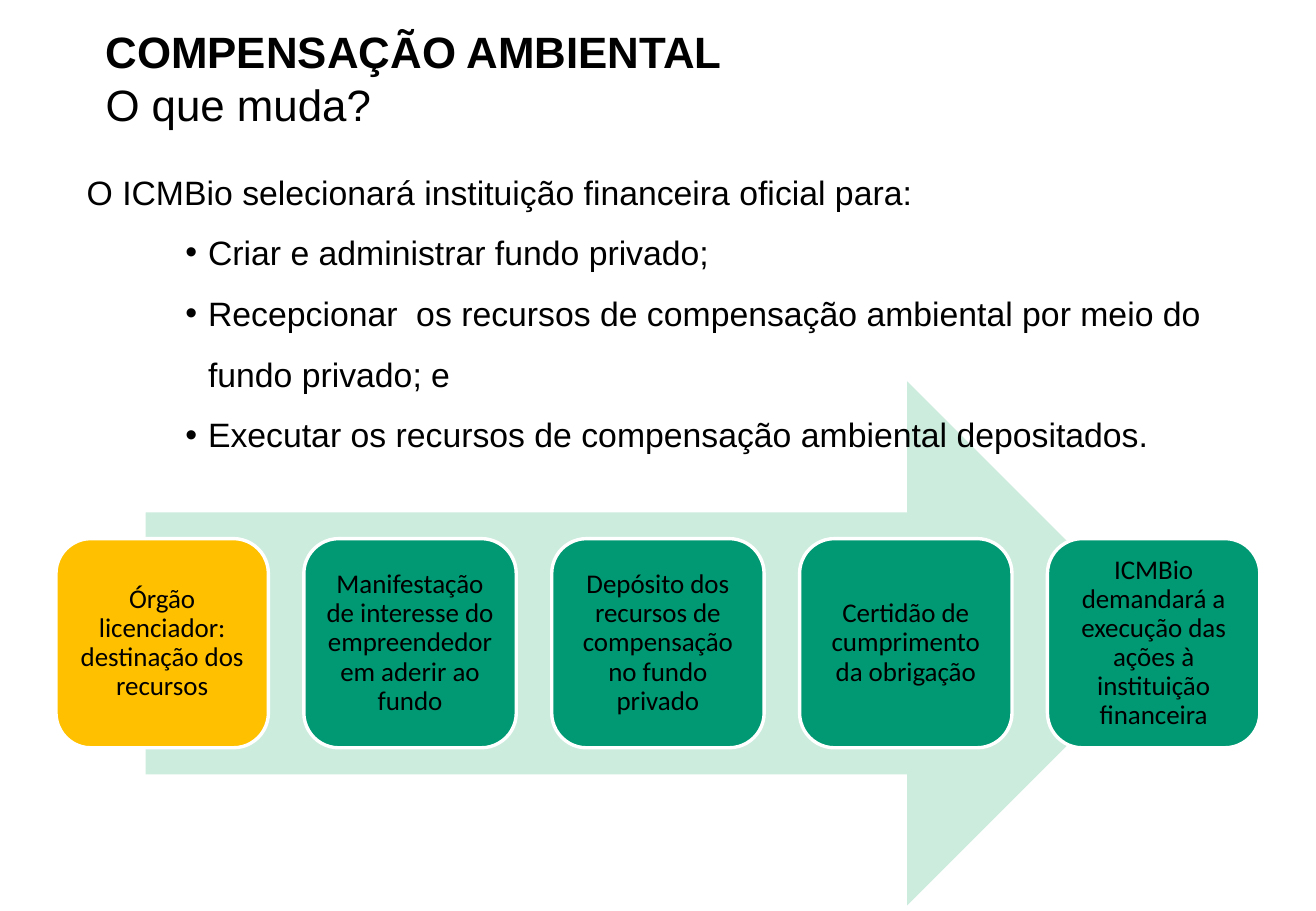
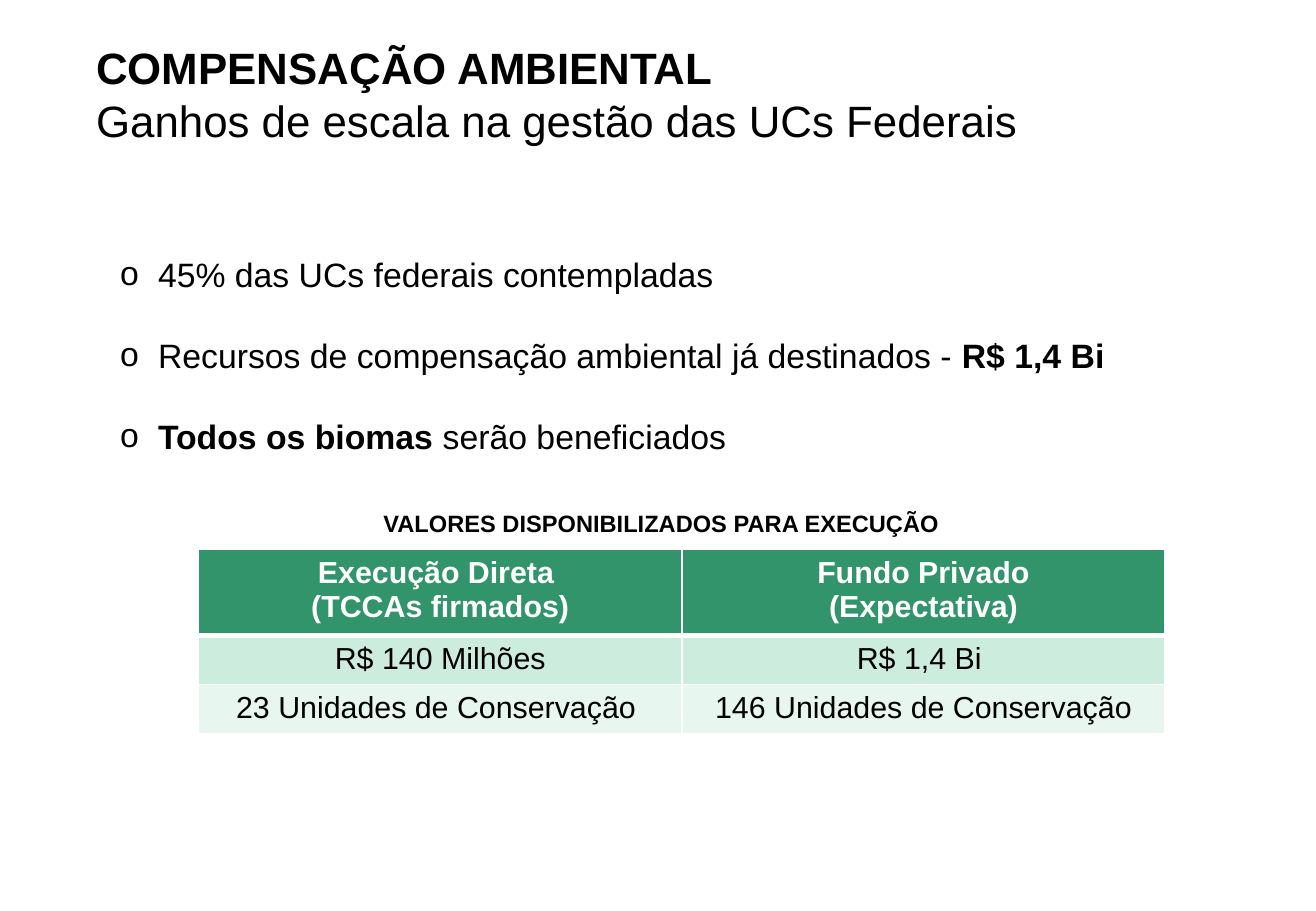
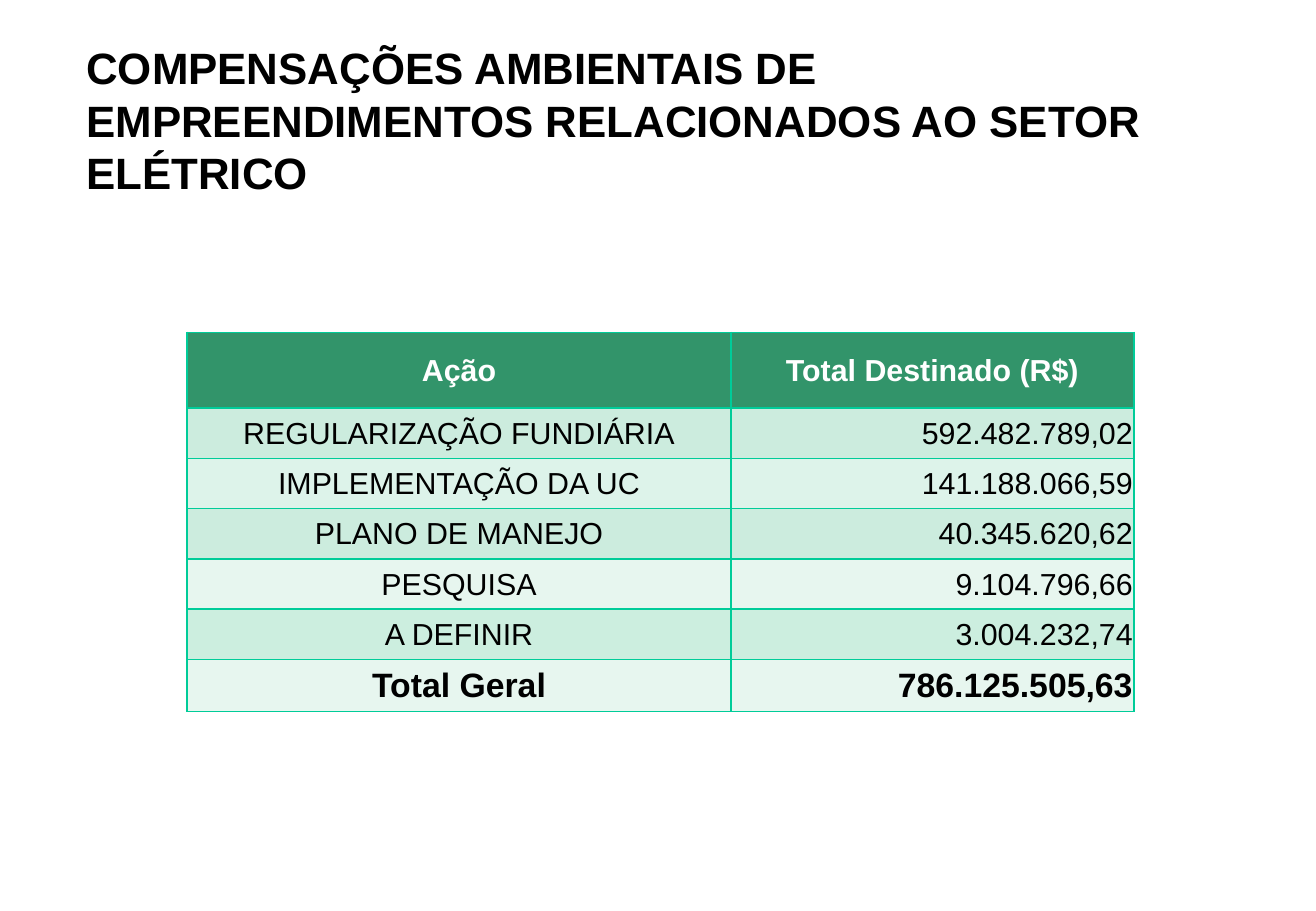
"""Builds three slides on environmental compensation funds."""
from lxml.etree import SubElement
from pptx import Presentation
from pptx.dml.color import RGBColor
from pptx.enum.shapes import MSO_SHAPE
from pptx.enum.text import MSO_ANCHOR, MSO_AUTO_SIZE, PP_ALIGN
from pptx.oxml import parse_xml
from pptx.oxml.ns import nsdecls, qn
from pptx.util import Pt

BLACK = RGBColor(0x00, 0x00, 0x00)
WHITE = RGBColor(0xFF, 0xFF, 0xFF)
AMBER = RGBColor(0xFF, 0xC0, 0x00)
GREEN = RGBColor(0x00, 0x99, 0x73)
TEAL = RGBColor(0x00, 0xCC, 0x99)
HEADER = RGBColor(0x32, 0x94, 0x6A)
MINT = RGBColor(0xCC, 0xEC, 0xDE)
SOFT_MINT = RGBColor(0xCC, 0xEE, 0xDF)
PALE_MINT = RGBColor(0xDD, 0xF3, 0xEA)
FAINT_MINT = RGBColor(0xE7, 0xF6, 0xEF)

SLIDE_WIDTH, SLIDE_HEIGHT = Pt(780.48), Pt(540)
CONTENT_LAYOUT, TITLE_LAYOUT = 1, 5
TITLE_SIZE, BODY_SIZE, CELL_SIZE = 26, 20, 18

STEPS = [
    "Órgão licenciador: destinação dos recursos",
    "Manifestação de interesse do empreendedor em aderir ao fundo",
    "Depósito dos recursos de compensação no fundo privado",
    "Certidão de cumprimento da obrigação",
    "ICMBio demandará a execução das ações à instituição financeira",
]
FUND_TASKS = [
    "Criar e administrar fundo privado;",
    "Recepcionar  os recursos de compensação ambiental por meio do fundo privado; e",
    "Executar os recursos de compensação ambiental depositados.",
]
GAINS = [
    [("45% das UCs federais contempladas", False)],
    [("Recursos de compensação ambiental já destinados - ", False), ("R$ 1,4 Bi", True)],
    [("Todos os biomas ", True), ("serão beneficiados", False)],
]
EXECUTION_ROWS = [
    (["Execução Direta ", "(TCCAs firmados)"], ["Fundo Privado", "(Expectativa)"]),
    (["R$ 140 Milhões"], ["R$ 1,4 Bi "]),
    (["23 Unidades de Conservação "], ["146 Unidades de Conservação"]),
]
ACTION_ROWS = [
    (["Ação"], ["Total Destinado (R$)"]),
    (["REGULARIZAÇÃO FUNDIÁRIA"], ["592.482.789,02"]),
    (["IMPLEMENTAÇÃO DA UC"], ["141.188.066,59"]),
    (["PLANO DE MANEJO"], ["40.345.620,62"]),
    (["PESQUISA"], ["9.104.796,66"]),
    (["A DEFINIR"], ["3.004.232,74"]),
    (["Total Geral"], ["786.125.505,63"]),
]


def place(shape, left, top, width, height):
    """Move and size a shape, in points."""
    shape.left, shape.top = Pt(left), Pt(top)
    shape.width, shape.height = Pt(width), Pt(height)


def add_span(para, text, size, bold=False, color=BLACK, font="Arial"):
    """Add one formatted run to a paragraph."""
    span = para.add_run()
    span.text = text
    span.font.name, span.font.size, span.font.bold = font, Pt(size), bold
    span.font.color.rgb = color


def next_para(frame, index):
    """Return the first paragraph of a frame, or a new one after it."""
    return frame.add_paragraph() if index else frame.paragraphs[0]


def open_frame(shape, box):
    """Prepare a placeholder for text set from its top left corner."""
    place(shape, *box)
    frame = shape.text_frame
    frame.word_wrap, frame.auto_size = True, MSO_AUTO_SIZE.NONE
    frame.vertical_anchor = MSO_ANCHOR.TOP
    return frame


def set_bullet(para, char=None, margin=0, hanging=0):
    """Give a paragraph its indent and a black bullet, or none."""
    props = para._p.get_or_add_pPr()
    props.set("marL", str(Pt(margin)))
    props.set("indent", str(-Pt(hanging)))
    if char is None:
        SubElement(props, qn("a:buNone"))
        return
    color = SubElement(props, qn("a:buClr"))
    SubElement(color, qn("a:srgbClr"), val=str(BLACK))
    SubElement(props, qn("a:buFont"), typeface="Arial")
    SubElement(props, qn("a:buChar"), char=char)


def add_title(page, lines, box):
    """Fill the title: a bold first line, then plain ones."""
    frame = open_frame(page.shapes.title, box)
    for index, line in enumerate(lines):
        para = next_para(frame, index)
        para.alignment, para.line_spacing = PP_ALIGN.LEFT, Pt(31.2)
        para.space_before = Pt(0)
        add_span(para, line, TITLE_SIZE, bold=index == 0)


def add_body_para(frame, index, spans, pitch=24, before=0, **bullet):
    """Write one paragraph of a body list."""
    para = next_para(frame, index)
    set_bullet(para, **bullet)
    para.line_spacing, para.space_before = Pt(pitch), Pt(before)
    for text, bold in spans:
        add_span(para, text, BODY_SIZE, bold)
    return para


def add_block(page, kind, box, fill):
    """Add a filled preset shape without outline or shadow."""
    shape = page.shapes.add_shape(kind, *map(Pt, box))
    shape.shadow.inherit = False
    shape.fill.solid()
    shape.fill.fore_color.rgb = fill
    shape.line.fill.background()
    return shape


def add_step(page, index, text):
    """Add one rounded step of the process row."""
    box = (33.2 + 147 * index, 319.3, 126, 124)
    step = add_block(page, MSO_SHAPE.ROUNDED_RECTANGLE, box, GREEN if index else AMBER)
    step.line.color.rgb, step.line.width = WHITE, Pt(2)
    frame = step.text_frame
    frame.word_wrap, frame.vertical_anchor = True, MSO_ANCHOR.MIDDLE
    frame.margin_left = frame.margin_right = Pt(5)
    frame.margin_top = frame.margin_bottom = Pt(5)
    para = frame.paragraphs[0]
    para.alignment, para.line_spacing = PP_ALIGN.CENTER, 0.9
    add_span(para, text, 16, font="Calibri")


def set_borders(cell, color, widths):
    """Draw the left, right, top and bottom borders of a cell."""
    props = cell._tc.get_or_add_tcPr()
    for index, (side, width) in enumerate(zip("LRTB", widths)):
        props.insert(index, parse_xml(
            f'<a:ln{side} {nsdecls("a")} w="{Pt(width)}"><a:solidFill>'
            f'<a:srgbClr val="{color}"/></a:solidFill></a:ln{side}>'))


def add_grid(page, corner, columns, heights, rows, fills, border, header_rule=1,
             margins=(7.2, 3.6, 7.2, 3.6), anchor=MSO_ANCHOR.TOP,
             value_align=PP_ALIGN.CENTER, total_size=CELL_SIZE):
    """Add a table with a header row; a larger last row is a bold total."""
    box = (*corner, sum(columns), sum(heights))
    table = page.shapes.add_table(len(rows), len(columns), *map(Pt, box)).table
    for column, width in zip(table.columns, columns):
        column.width = Pt(width)
    for row, (lines, height) in enumerate(zip(rows, heights)):
        table.rows[row].height = Pt(height)
        total = row == len(rows) - 1 and total_size != CELL_SIZE
        widths = (1, 1, header_rule if row == 1 else 1, header_rule if row == 0 else 1)
        for column, cell_lines in enumerate(lines):
            cell = table.cell(row, column)
            cell.fill.solid()
            cell.fill.fore_color.rgb = fills[row]
            set_borders(cell, border, widths)
            cell.vertical_anchor = anchor
            (cell.margin_left, cell.margin_top,
             cell.margin_right, cell.margin_bottom) = map(Pt, margins)
            for index, line in enumerate(cell_lines):
                para = next_para(cell.text_frame, index)
                para.alignment = value_align if row and column else PP_ALIGN.CENTER
                add_span(para, line, total_size if total else CELL_SIZE,
                         bold=row == 0 or total, color=BLACK if row else WHITE)


def build_changes(deck):
    """Build the slide on what changes."""
    page = deck.slides.add_slide(deck.slide_layouts[CONTENT_LAYOUT])
    add_title(page, ["COMPENSAÇÃO AMBIENTAL", "O que muda?"], (55.4, 11.2, 384, 70.5))
    add_block(page, MSO_SHAPE.RIGHT_ARROW, (86.4, 226, 607, 310.7), MINT)
    for index, text in enumerate(STEPS):
        add_step(page, index, text)
    body = page.placeholders[1]
    frame = open_frame(body, (44.2, 97.9, 703, 172))
    intro = "O ICMBio selecionará instituição financeira oficial para:"
    add_body_para(frame, 0, [(intro, False)])
    for index, task in enumerate(FUND_TASKS, 1):
        para = add_body_para(frame, index, [(task, False)], pitch=36,
                             char="•", margin=72, hanging=13.5)
        para.level = 1
    body.element.getparent().append(body.element)


def build_gains(deck):
    """Build the slide on gains of scale."""
    page = deck.slides.add_slide(deck.slide_layouts[CONTENT_LAYOUT])
    add_title(page, ["COMPENSAÇÃO AMBIENTAL", "Ganhos de escala na gestão das UCs Federais"],
              (49.8, 20.7, 629, 70.5))
    frame = open_frame(page.placeholders[1], (64, 147, 680, 225))
    for index, spans in enumerate(GAINS):
        add_body_para(frame, index, spans, before=24 if index else 0,
                      char="o", margin=22.5, hanging=22.5)
    add_grid(page, (117.8, 325.7), (286.6, 286.6), (51, 29, 29), EXECUTION_ROWS,
             (HEADER, MINT, FAINT_MINT), WHITE, header_rule=3)
    caption = page.shapes.add_textbox(Pt(220.3), Pt(298.3), Pt(402), Pt(24))
    caption.text_frame.word_wrap = True
    add_span(caption.text_frame.paragraphs[0], "VALORES DISPONIBILIZADOS PARA EXECUÇÃO",
             14, bold=True)


def build_power_sector(deck):
    """Build the slide on the power sector."""
    page = deck.slides.add_slide(deck.slide_layouts[TITLE_LAYOUT])
    title = "COMPENSAÇÕES AMBIENTAIS DE EMPREENDIMENTOS RELACIONADOS AO SETOR ELÉTRICO"
    add_title(page, [title], (44, 20.4, 687.6, 101.5))
    add_grid(page, (111, 197), (322.5, 239), (44.9, *[29.8] * 5, 31), ACTION_ROWS,
             (HEADER, MINT, PALE_MINT, MINT, FAINT_MINT, SOFT_MINT, FAINT_MINT), TEAL,
             margins=(0.7, 0.7, 0.7, 0), anchor=MSO_ANCHOR.MIDDLE,
             value_align=PP_ALIGN.RIGHT, total_size=20)


def main():
    """Build and save the deck."""
    deck = Presentation()
    deck.slide_width = SLIDE_WIDTH
    deck.slide_height = SLIDE_HEIGHT
    build_changes(deck)
    build_gains(deck)
    build_power_sector(deck)
    deck.save("out.pptx")


if __name__ == "__main__":
    main()
